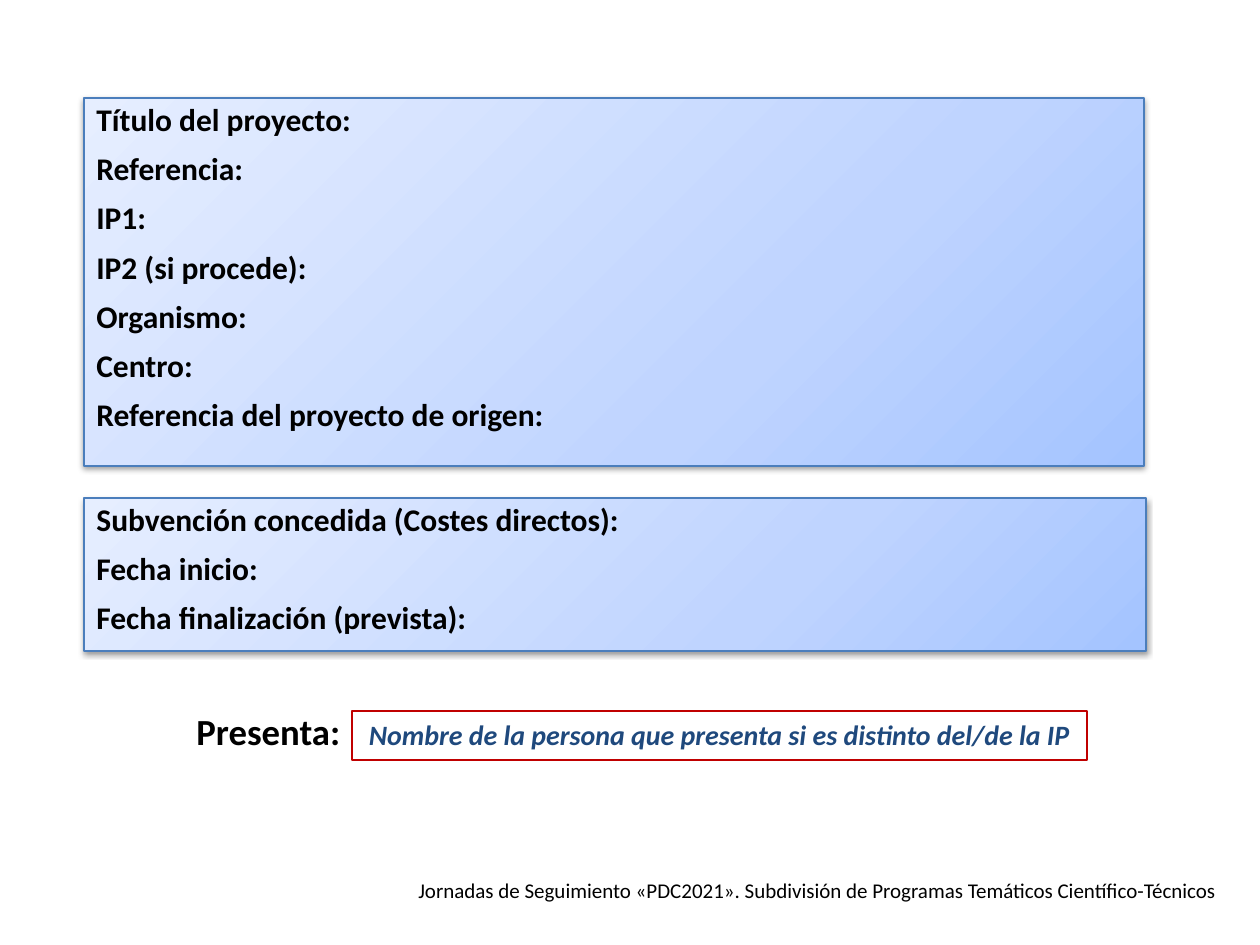
from copy import deepcopy
from dataclasses import dataclass

from lxml.etree import SubElement
from pptx import Presentation
from pptx.dml.color import RGBColor
from pptx.enum.shapes import MSO_SHAPE
from pptx.enum.text import MSO_ANCHOR, PP_ALIGN
from pptx.oxml.ns import qn
from pptx.util import Emu, Pt

PX_PER_INCH = 126


def px(length: int) -> Emu:
    return Emu(round(length * 914400 / PX_PER_INCH))


@dataclass(frozen=True)
class Theme:
    font: str = "Calibri"
    text: str = "000000"
    name: str = "1F497D"
    panel_line: str = "4B7EBC"
    name_line: str = "C00000"
    gradient: tuple = ((0, "A4C4FF"), (0.35, "BFD4FF"), (1, "E6EEFF"))
    gradient_angle: int = 135
    field_size: int = 18
    presenter_size: int = 21
    name_size: int = 16
    footer_size: int = 12
    line_width: float = 0.75
    field_gap: float = 8.7
    field_spacing: float = 0.9


@dataclass(frozen=True)
class Box:
    left: int
    top: int
    width: int
    height: int

    def emu(self) -> tuple:
        return px(self.left), px(self.top), px(self.width), px(self.height)


@dataclass(frozen=True)
class Panel:
    box: Box
    fields: tuple


THEME = Theme()

PANELS = (
    Panel(Box(84, 98, 1060, 368), (
        "Título del proyecto:",
        "Referencia:",
        "IP1:",
        "IP2 (si procede):",
        "Organismo:",
        "Centro:",
        "Referencia del proyecto de origen:",
    )),
    Panel(Box(84, 498, 1062, 153), (
        "Subvención concedida (Costes directos):",
        "Fecha inicio:",
        "Fecha finalización (prevista):",
    )),
)


def format_font(font, size: int, color: str, bold: bool = False, italic: bool = False) -> None:
    font.name = THEME.font
    font.size = Pt(size)
    font.bold = bold
    font.italic = italic
    font.color.rgb = RGBColor.from_string(color)


def add_rectangle(slide, box: Box, line_color: str):
    rectangle = slide.shapes.add_shape(MSO_SHAPE.RECTANGLE, *box.emu())
    rectangle.shadow.inherit = False
    rectangle.line.color.rgb = RGBColor.from_string(line_color)
    rectangle.line.width = Pt(THEME.line_width)
    rectangle.text_frame.word_wrap = True
    return rectangle


def fill_gradient(shape) -> None:
    shape.fill.gradient()
    shape.fill.gradient_angle = THEME.gradient_angle
    stop_list = shape._element.spPr.find(qn("a:gradFill")).find(qn("a:gsLst"))
    stop_list.append(deepcopy(stop_list[-1]))
    for stop, (position, color) in zip(shape.fill.gradient_stops, THEME.gradient):
        stop.position = position
        stop.color.rgb = RGBColor.from_string(color)


def add_shadow(shape) -> None:
    effects = shape._element.spPr.find(qn("a:effectLst"))
    shadow = SubElement(effects, qn("a:outerShdw"), blurRad="40000", dist="20000",
                        dir="5400000", rotWithShape="0")
    color = SubElement(shadow, qn("a:srgbClr"), val="000000")
    SubElement(color, qn("a:alpha"), val="38000")


def add_panel(slide, panel: Panel) -> None:
    rectangle = add_rectangle(slide, panel.box, THEME.panel_line)
    fill_gradient(rectangle)
    add_shadow(rectangle)
    frame = rectangle.text_frame
    frame.vertical_anchor = MSO_ANCHOR.TOP
    frame.text = "\n".join(panel.fields)
    for index, paragraph in enumerate(frame.paragraphs):
        paragraph.alignment = PP_ALIGN.LEFT
        paragraph.line_spacing = THEME.field_spacing
        paragraph.space_before = Pt(THEME.field_gap if index else 0)
        format_font(paragraph.runs[0].font, THEME.field_size, THEME.text, bold=True)


def add_label(slide, box: Box, text: str, size: int, bold: bool, wrap: bool) -> None:
    frame = slide.shapes.add_textbox(*box.emu()).text_frame
    frame.word_wrap = wrap
    frame.text = text
    format_font(frame.paragraphs[0].runs[0].font, size, THEME.text, bold)


def add_presenter_name(slide, box: Box, text: str) -> None:
    rectangle = add_rectangle(slide, box, THEME.name_line)
    rectangle.fill.background()
    frame = rectangle.text_frame
    frame.vertical_anchor = MSO_ANCHOR.TOP
    frame.text = text
    paragraph = frame.paragraphs[0]
    paragraph.alignment = PP_ALIGN.CENTER
    format_font(paragraph.runs[0].font, THEME.name_size, THEME.name, bold=True, italic=True)


def main() -> None:
    presentation = Presentation()
    presentation.slide_width = px(1260)
    presentation.slide_height = px(945)
    slide = presentation.slides.add_slide(presentation.slide_layouts[6])
    add_label(slide, Box(406, 871, 833, 38),
              "Jornadas de Seguimiento «PDC2021». Subdivisión de Programas Temáticos Científico-Técnicos",
              THEME.footer_size, bold=False, wrap=False)
    for panel in PANELS:
        add_panel(slide, panel)
    add_label(slide, Box(184, 703, 195, 57), "Presenta:",
              THEME.presenter_size, bold=True, wrap=True)
    add_presenter_name(slide, Box(352, 711, 735, 49),
                       "Nombre de la persona que presenta si es distinto del/de la IP")
    presentation.save("out.pptx")


if __name__ == "__main__":
    main()
